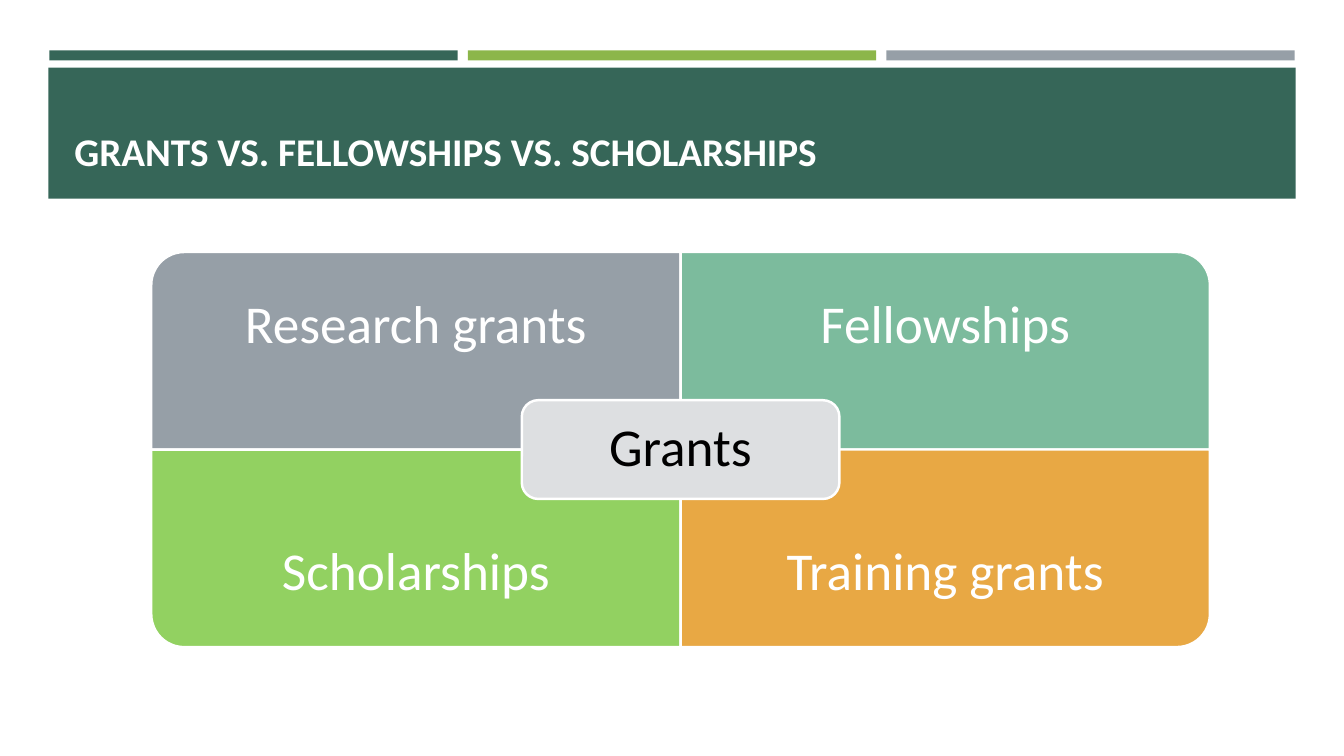
from dataclasses import dataclass

import pptx
import pptx.dml.color
import pptx.enum.shapes
import pptx.enum.text
import pptx.util

SHAPE = pptx.enum.shapes.MSO_SHAPE
ALIGN = pptx.enum.text.PP_ALIGN
ANCHOR = pptx.enum.text.MSO_ANCHOR


@dataclass(frozen=True)
class Theme:
    font: str = "Calibri"
    title_size: int = 28
    label_size: int = 38
    outline: float = 1.75
    white: str = "FFFFFF"
    black: str = "000000"
    pine: str = "366658"
    leaf: str = "8CB64A"
    slate: str = "969FA7"
    mint: str = "7CBB9D"
    lime: str = "92D161"
    amber: str = "E8A844"
    mist: str = "DDDFE1"


@dataclass(frozen=True)
class Area:
    left: float
    top: float
    width: float
    height: float

    def emu(self) -> list[int]:
        return [pptx.util.Inches(side) for side in (self.left, self.top, self.width, self.height)]

    def turned(self) -> "Area":
        shift = (self.width - self.height) / 2
        return Area(self.left + shift, self.top - shift, self.height, self.width)


@dataclass(frozen=True)
class Grid:
    left: float
    top: float
    column: float
    row: float

    def area(self, column: float, row: float, columns: float, rows: float) -> Area:
        return Area(self.left + column * self.column, self.top + row * self.row,
                    columns * self.column, rows * self.row)


@dataclass(frozen=True)
class Quadrant:
    label: str
    column: int
    row: int
    rotation: int
    fill: str


THEME = Theme()
MATRIX = Grid(left=1.5, top=2.5, column=5.25, row=1.96)
BARS = Grid(left=0.49, top=0.5, column=4.15, row=0.1)
BAR_SHARE = 4.05 / 4.15
LABEL_SHARE = 0.75
BAR_FILLS = (THEME.pine, THEME.leaf, THEME.slate)
QUADRANTS = (
    Quadrant("Research grants", 0, 0, 270, THEME.slate),
    Quadrant("Fellowships", 1, 0, 0, THEME.mint),
    Quadrant("Scholarships", 0, 1, 180, THEME.lime),
    Quadrant("Training grants", 1, 1, 90, THEME.amber),
)


def rgb(value: str) -> pptx.dml.color.RGBColor:
    return pptx.dml.color.RGBColor.from_string(value)


def add_block(page, kind, area: Area, fill: str, outlined: bool = False, rotation: int = 0) -> None:
    placed = area.turned() if rotation % 180 else area
    block = page.shapes.add_shape(kind, *placed.emu())
    block.rotation = rotation
    block.shadow.inherit = False
    block.fill.solid()
    block.fill.fore_color.rgb = rgb(fill)
    if outlined:
        block.line.color.rgb = rgb(THEME.white)
        block.line.width = pptx.util.Pt(THEME.outline)
    else:
        block.line.fill.background()


def add_text(page, area: Area, text: str, size: int, color: str, anchor=ANCHOR.MIDDLE,
             align=ALIGN.CENTER, bold: bool = False, inset: float = 0.3,
             spacing: float = 0.9) -> None:
    frame = page.shapes.add_textbox(*area.emu()).text_frame
    frame.word_wrap = True
    frame.vertical_anchor = anchor
    frame.margin_left = frame.margin_right = pptx.util.Inches(inset)
    frame.margin_top = frame.margin_bottom = pptx.util.Inches(min(inset, area.height / 5))
    para = frame.paragraphs[0]
    para.text = text
    para.alignment = align
    para.line_spacing = spacing
    para.font.name = THEME.font
    para.font.size = pptx.util.Pt(size)
    para.font.bold = bold
    para.font.color.rgb = rgb(color)


def add_header(page) -> None:
    for column, fill in enumerate(BAR_FILLS):
        add_block(page, SHAPE.RECTANGLE, BARS.area(column, 0, BAR_SHARE, 1), fill)
    add_block(page, SHAPE.RECTANGLE, Area(0.48, 0.67, 12.37, 1.3), THEME.pine)
    add_text(page, Area(0.64, 0.77, 12.06, 1.06), "GRANTS VS. FELLOWSHIPS VS. SCHOLARSHIPS",
             THEME.title_size, THEME.white, ANCHOR.BOTTOM, ALIGN.LEFT, True, 0.1, 1.0)


def add_matrix(page) -> None:
    for item in QUADRANTS:
        add_block(page, SHAPE.ROUND_1_RECTANGLE, MATRIX.area(item.column, item.row, 1, 1),
                  item.fill, True, item.rotation)
        label_row = item.row * (2 - LABEL_SHARE)
        add_text(page, MATRIX.area(item.column, label_row, 1, LABEL_SHARE), item.label,
                 THEME.label_size, THEME.white)
    hub = MATRIX.area(0.7, 0.75, 0.6, 0.5)
    add_block(page, SHAPE.ROUNDED_RECTANGLE, hub, THEME.mist, True)
    add_text(page, hub, "Grants", THEME.label_size, THEME.black, inset=0.16)


def main() -> None:
    deck = pptx.Presentation()
    deck.slide_width = pptx.util.Inches(13.33)
    deck.slide_height = pptx.util.Inches(7.5)
    page = deck.slides.add_slide(deck.slide_layouts[6])
    add_header(page)
    add_matrix(page)
    deck.save("out.pptx")


if __name__ == "__main__":
    main()
